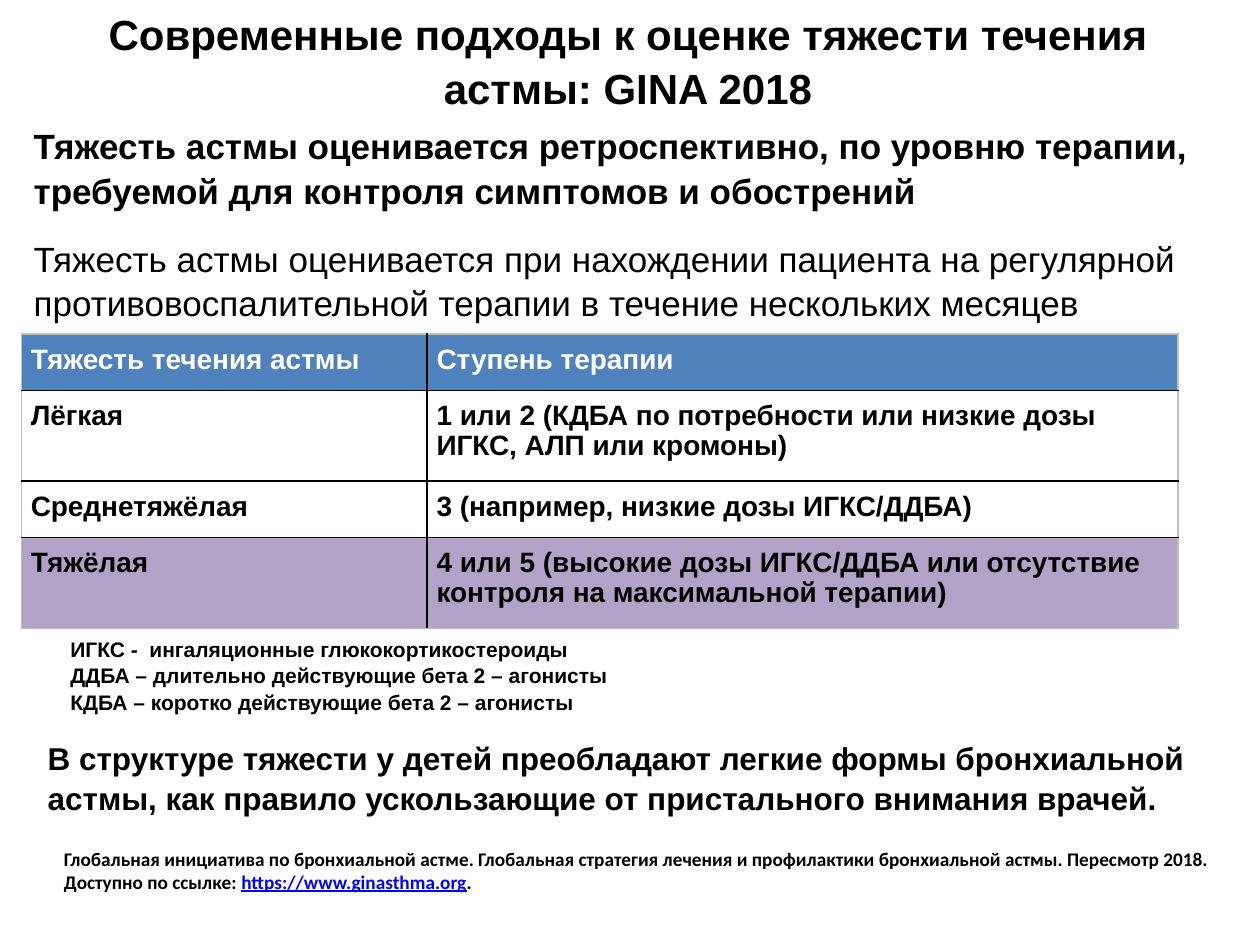
from dataclasses import dataclass
from lxml.etree import SubElement
from pptx import Presentation
from pptx.dml.color import RGBColor
from pptx.enum.text import MSO_ANCHOR, PP_ALIGN
from pptx.oxml.ns import qn
from pptx.util import Cm, Pt


@dataclass(frozen=True)
class Theme:
    sans: str = "Arial"
    alt: str = "Calibri"
    ink: str = "000000"
    white: str = "FFFFFF"
    link: str = "0000FF"
    head: str = "4F81BD"
    severe: str = "B3A2C7"
    edge: str = "BFBFBF"
    title: float = 24
    lead: float = 20
    body: float = 18
    cell: float = 16
    note: float = 12
    cite: float = 11
    loose: float = 1.06
    tight: float = 0.96


class Deck:
    def __init__(self, theme):
        self.theme = theme
        self.prs = Presentation()
        self.prs.slide_width, self.prs.slide_height = Cm(25.4), Cm(19.05)
        self.slide = self.prs.slides.add_slide(self.prs.slide_layouts[6])

    def run(self, para, text, size, color=None, bold=True, line=False, face=None):
        run = para.add_run()
        run.text = text
        font = run.font
        font.name = face or self.theme.sans
        font.size, font.bold = Pt(size), bold
        if line:
            font.underline = True
        font.color.rgb = RGBColor.from_string(color or self.theme.ink)

    def text(self, area, paras, size, gap=0, space=None, align=PP_ALIGN.LEFT,
             anchor=MSO_ANCHOR.TOP, face=None):
        frame = self.slide.shapes.add_textbox(*map(Cm, area)).text_frame
        frame.word_wrap = True
        frame.vertical_anchor = anchor
        for i, runs in enumerate(paras):
            para = frame.add_paragraph() if i else frame.paragraphs[0]
            para.alignment = align
            para.line_spacing = space or self.theme.loose
            if i and gap:
                para.space_before = Pt(gap)
            for words, style in runs:
                self.run(para, words, size, face=face, **style)

    def border(self, cell, side, color):
        line = SubElement(cell._tc.get_or_add_tcPr(), qn(f"a:ln{side}"), w=str(Pt(1)))
        fill = SubElement(line, qn("a:solidFill"))
        SubElement(fill, qn("a:srgbClr"), val=color)

    def table(self, area, cols, highs, rows, fills):
        t = self.theme
        grid = self.slide.shapes.add_table(len(rows), len(cols), *map(Cm, area)).table
        grid.first_row = grid.horz_banding = False
        for col, wide in zip(grid.columns, cols):
            col.width = Cm(wide)
        for row, high in zip(grid.rows, highs):
            row.height = Cm(high)
        for r, texts in enumerate(rows):
            for c, words in enumerate(texts):
                cell = grid.cell(r, c)
                cell.margin_left = cell.margin_right = Cm(0.19)
                cell.margin_top = cell.margin_bottom = Cm(0.23)
                outer = {"L": c == 0, "R": c == len(cols) - 1,
                         "T": r == 0, "B": r == len(rows) - 1}
                for side, edge in outer.items():
                    self.border(cell, side, t.edge if edge else t.ink)
                if fills[r]:
                    cell.fill.solid()
                    cell.fill.fore_color.rgb = RGBColor.from_string(fills[r])
                else:
                    cell.fill.background()
                para = cell.text_frame.paragraphs[0]
                para.line_spacing = t.tight
                self.run(para, words, t.cell, t.ink if r else t.white)


def main():
    t = Theme()
    deck = Deck(t)
    deck.text((0.43, 0.13, 24.46, 2.13),
              [[("Современные подходы к оценке тяжести течения астмы: GINA 2018", {})]],
              t.title, align=PP_ALIGN.CENTER, anchor=MSO_ANCHOR.MIDDLE)
    deck.text((0.43, 2.34, 23.85, 4.17), [
        [("Тяжесть астмы оценивается ретроспективно, по уровню терапии, "
          "требуемой для контроля симптомов и обострений", {})],
        [("Тяжесть астмы оценивается при нахождении пациента на регулярной "
          "противовоспалительной терапии в течение нескольких месяцев", {"bold": False})],
    ], t.lead, gap=13.5)
    deck.table((0.43, 6.73, 23.32, 5.94), (8.18, 15.14), (1.14, 1.83, 1.14, 1.83), [
        ("Тяжесть течения астмы", "Ступень терапии"),
        ("Лёгкая", "1 или 2 (КДБА по потребности или низкие дозы ИГКС, АЛП или кромоны)"),
        ("Среднетяжёлая", "3 (например, низкие дозы ИГКС/ДДБА)"),
        ("Тяжёлая", "4 или 5 (высокие дозы ИГКС/ДДБА или отсутствие "
                    "контроля на максимальной терапии)"),
    ], (t.head, None, None, t.severe))
    deck.text((1.17, 12.67, 21.84, 2), [
        [("ИГКС -  ингаляционные глюкокортикостероиды", {})],
        [("ДДБА – длительно действующие бета 2 – агонисты", {})],
        [("КДБА – коротко действующие бета 2 – агонисты", {})],
    ], t.note)
    deck.text((1.04, 16.92, 24.36, 1.24), [
        [("Глобальная инициатива по бронхиальной астме. Глобальная стратегия лечения "
          "и профилактики бронхиальной астмы. Пересмотр 2018.", {})],
        [("Доступно по ссылке: ", {}),
         ("https://www.ginasthma.org", {"color": t.link, "line": True}),
         (".", {})],
    ], t.cite, space=1.0, anchor=MSO_ANCHOR.MIDDLE, face=t.alt)
    deck.text((0.71, 14.73, 23.52, 1.8),
              [[("В структуре тяжести у детей преобладают легкие формы бронхиальной "
                 "астмы, как правило ускользающие от пристального внимания врачей.", {})]],
              t.body)
    deck.prs.save("out.pptx")


if __name__ == "__main__":
    main()
